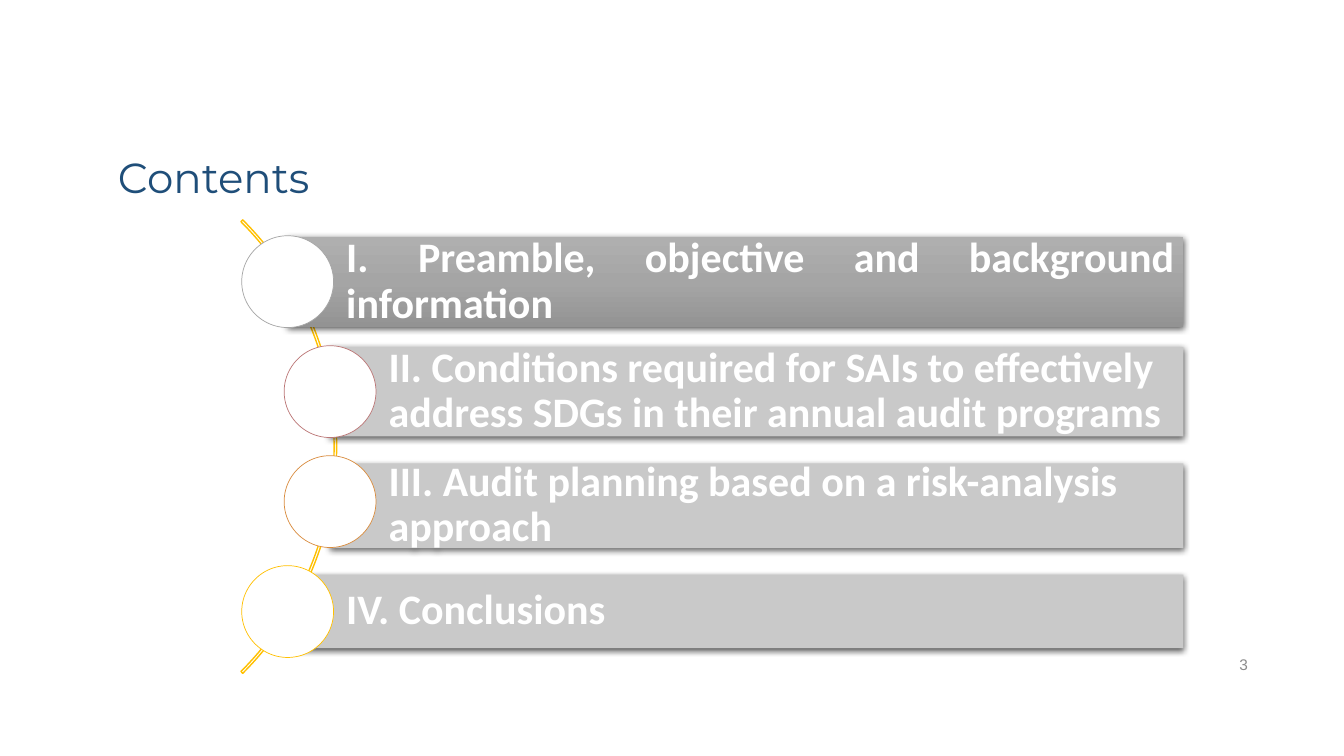
from copy import deepcopy

from lxml import etree
from pptx import Presentation
from pptx.dml.color import RGBColor
from pptx.enum import shapes, text
from pptx.oxml import ns
from pptx.util import Pt

COLORS = {
    "title": "1F4E79", "number": "8C8C8C", "white": "FFFFFF", "bar": "C9C9C9",
    "arc": "FFC000", "grey": "A5A5A5", "rose": "BB7676", "orange": "D98C3F",
}
GRADIENT = [(0, "AFAFAF"), (0.5, "A5A5A5"), (1, "939393")]
SHADOW = (
    f'<a:effectLst {ns.nsdecls("a")}>'
    '<a:outerShdw blurRad="57150" dist="19050" dir="5400000" algn="ctr" rotWithShape="0">'
    '<a:srgbClr val="000000"><a:alpha val="63000"/></a:srgbClr>'
    '</a:outerShdw></a:effectLst>'
)


def rgb(name):
    return RGBColor.from_string(COLORS[name])


def write(shape, content, font, size, color, bold=False, align=text.PP_ALIGN.LEFT,
          anchor=text.MSO_ANCHOR.MIDDLE, margins=(7.2, 3.6, 7.2, 3.6), spacing=1.0, wrap=True):
    """Fill a shape with one formatted paragraph; margins run left, top, right, bottom."""
    frame = shape.text_frame
    frame.word_wrap = wrap
    frame.vertical_anchor = anchor
    frame.margin_left, frame.margin_top, frame.margin_right, frame.margin_bottom = map(Pt, margins)
    paragraph = frame.paragraphs[0]
    paragraph.alignment = align
    paragraph.line_spacing = spacing
    run = paragraph.add_run()
    run.text = content
    run.font.name = font
    run.font.size = Pt(size)
    run.font.bold = bold
    run.font.color.rgb = rgb(color)


presentation = Presentation()
presentation.slide_width, presentation.slide_height = Pt(960), Pt(540)
slide = presentation.slides.add_slide(presentation.slide_layouts[6])

number = slide.shapes.add_textbox(Pt(682.5), Pt(460), Pt(216), Pt(28.8))
write(number, "3", "Arial", 11, "number", align=text.PP_ALIGN.RIGHT)

# Arc behind the list
arc = slide.shapes.add_shape(shapes.MSO_SHAPE.BLOCK_ARC, Pt(-217.5), Pt(90), Pt(458), Pt(458))
arc.adjustments[0], arc.adjustments[1], arc.adjustments[2] = 189, 27, 0.004
arc.fill.background()
arc.line.color.rgb = rgb("arc")
arc.line.width = Pt(1)
arc.shadow.inherit = False

# One bar and one circle for each section
CIRCLE = 65.6
FIRST_TOP, PITCH = 168.4, 78.55
BAR_RIGHT = 845.3
sections = [
    # heading, circle left, bar top, bar height, circle line, alignment
    ("I. Preamble, objective and background information",
     172.7, 169.2, 64.1, "grey", text.PP_ALIGN.JUSTIFY),
    ("II. Conditions required for SAIs to effectively address SDGs in their annual audit programs",
     203, 247.7, 64.1, "rose", text.PP_ALIGN.LEFT),
    ("III. Audit planning based on a risk-analysis approach",
     203, 331, 60.5, "orange", text.PP_ALIGN.LEFT),
    ("IV. Conclusions",
     172.7, 410.4, 52.6, "arc", text.PP_ALIGN.LEFT),
]
for index, (heading, circle_left, bar_top, bar_height, outline, align) in enumerate(sections):
    bar_left = circle_left + CIRCLE / 2
    bar = slide.shapes.add_shape(shapes.MSO_SHAPE.RECTANGLE, Pt(bar_left), Pt(bar_top),
                                 Pt(BAR_RIGHT - bar_left), Pt(bar_height))
    bar.line.fill.background()
    if index == 0:
        bar.fill.gradient()
        bar.fill.gradient_angle = 270
        stop_list = bar.element.spPr.find(".//" + ns.qn("a:gsLst"))
        stop_list.append(deepcopy(stop_list[-1]))
        for stop, (position, color) in zip(bar.fill.gradient_stops, GRADIENT):
            stop.position = position
            stop.color.rgb = RGBColor.from_string(color)
    else:
        bar.fill.solid()
        bar.fill.fore_color.rgb = rgb("bar")
    bar.element.spPr.append(etree.fromstring(SHADOW))
    write(bar, heading, "Calibri", 30, "white", bold=True, align=align,
          margins=(41.8, 5.8, 5.8, 5.8), spacing=0.9)

    circle = slide.shapes.add_shape(shapes.MSO_SHAPE.OVAL, Pt(circle_left),
                                    Pt(FIRST_TOP + index * PITCH), Pt(CIRCLE), Pt(CIRCLE))
    circle.fill.solid()
    circle.fill.fore_color.rgb = rgb("white")
    circle.line.color.rgb = rgb(outline)
    circle.line.width = Pt(0.5)
    circle.shadow.inherit = False

title = slide.shapes.add_textbox(Pt(70.6), Pt(105), Pt(164), Pt(44))
write(title, "Contents", "Montserrat", 30, "title", align=text.PP_ALIGN.CENTER,
      anchor=text.MSO_ANCHOR.TOP, wrap=False)

presentation.save("out.pptx")
